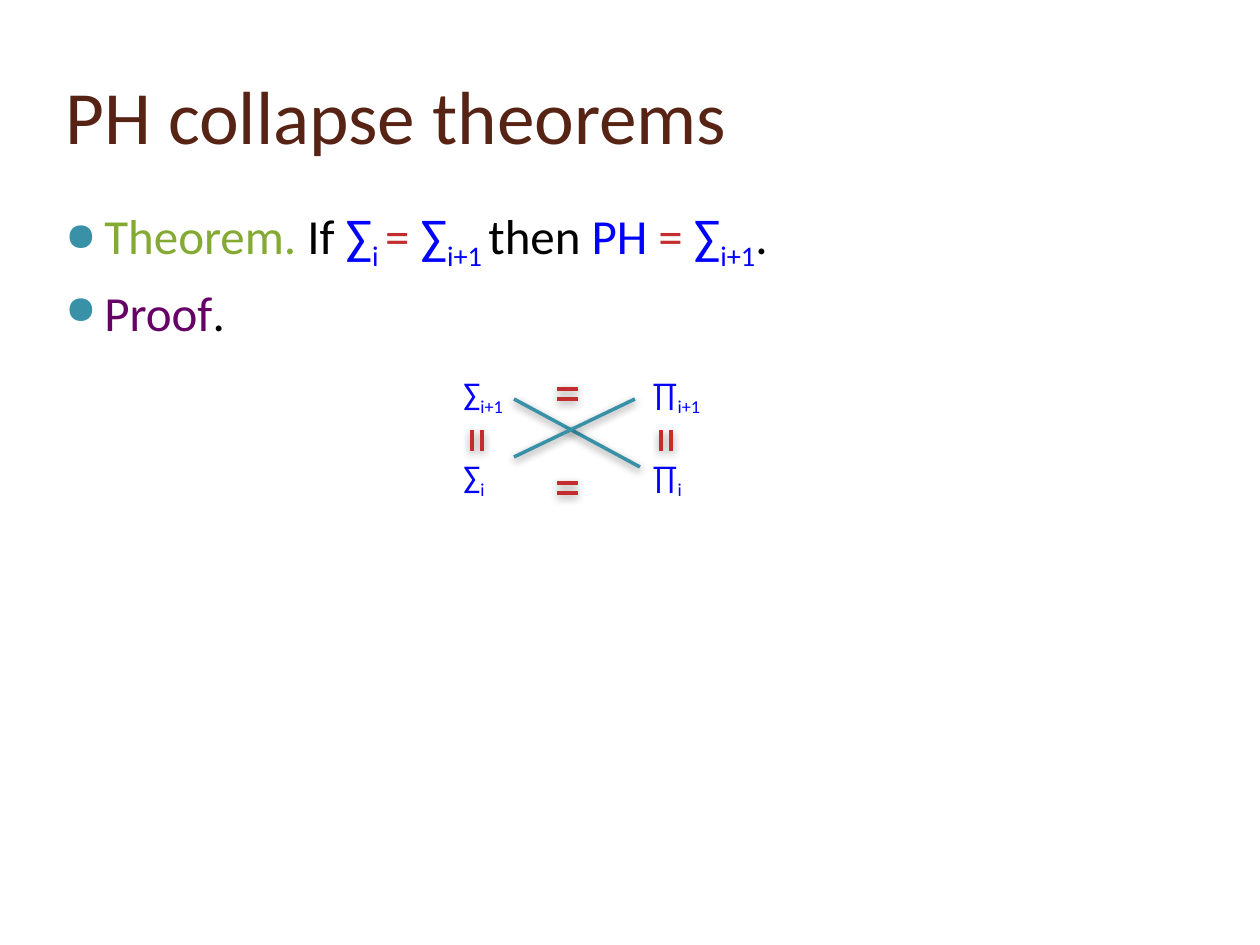
import lxml.etree
import pptx
import pptx.dml.color
import pptx.enum.shapes
import pptx.enum.text
import pptx.oxml
import pptx.oxml.ns
import pptx.util

PX = 914400 / 126
FONT = "Calibri"
COLORS = {
    "title": "572314",
    "green": "84AA33",
    "black": "000000",
    "blue": "0000FF",
    "red": "C32D2E",
    "purple": "660066",
    "teal": "3891A7",
}
NS = pptx.oxml.ns.nsdecls("a")


def px(n):
    return pptx.util.Emu(round(n * PX))


def rgb(name):
    return pptx.dml.color.RGBColor.from_string(COLORS[name])


def add_box(slide, x, y, w, h, wrap=True):
    frame = slide.shapes.add_textbox(px(x), px(y), px(w), px(h)).text_frame
    frame.word_wrap = wrap
    return frame


def add_runs(para, size, parts):
    """Each part is (text, color) or (text, color, True) for a subscript."""
    for text, color, *sub in parts:
        run = para.add_run()
        run.text = text
        run.font.size = pptx.util.Pt(size)
        run.font.name = FONT
        run.font.color.rgb = rgb(color)
        if sub:
            run._r.get_or_add_rPr().set("baseline", "-25000")


def add_bullet(para):
    props = para._p.get_or_add_pPr()
    props.set("marL", str(px(50)))
    props.set("indent", str(px(-39)))
    for xml in (
        f'<a:buClr {NS}><a:srgbClr val="{COLORS["teal"]}"/></a:buClr>',
        f'<a:buSzPct {NS} val="80000"/>',
        f'<a:buChar {NS} char="●"/>',
    ):
        props.append(pptx.oxml.parse_xml(xml))


def add_line(slide, x1, y1, x2, y2, color):
    line = slide.shapes.add_connector(
        pptx.enum.shapes.MSO_CONNECTOR.STRAIGHT, px(x1), px(y1), px(x2), px(y2))
    line.line.color.rgb = rgb(color)
    line.line.width = pptx.util.Pt(2)
    # Soft shadow below the line
    line._element.spPr.append(pptx.oxml.parse_xml(
        f'<a:effectLst {NS}><a:outerShdw blurRad="63500" dist="25400" '
        'dir="5400000" rotWithShape="0"><a:srgbClr val="000000">'
        '<a:alpha val="43000"/></a:srgbClr></a:outerShdw></a:effectLst>'))


def add_title(slide, x, y, w, h):
    frame = add_box(slide, x, y, w, h)
    frame.vertical_anchor = pptx.enum.text.MSO_ANCHOR.MIDDLE
    add_runs(frame.paragraphs[0], 43, [("PH collapse theorems", "title")])


def add_body(slide, x, y, w, h):
    frame = add_box(slide, x, y, w, h)
    items = [
        [("Theorem. ", "green"), ("If ", "black"),
         ("∑", "blue"), ("i ", "blue", True), ("= ", "red"),
         ("∑", "blue"), ("i+1 ", "blue", True), ("then ", "black"),
         ("PH ", "blue"), ("= ", "red"),
         ("∑", "blue"), ("i+1", "blue", True), (".", "black")],
        [("Proof", "purple"), (".", "black")],
    ]
    for i, parts in enumerate(items):
        para = frame.add_paragraph() if i else frame.paragraphs[0]
        para.alignment = pptx.enum.text.PP_ALIGN.JUSTIFY
        para.space_before = pptx.util.Pt(6)
        add_bullet(para)
        add_runs(para, 28, parts)


def add_proof(slide, x, y):
    # Class labels, one column for each symbol
    for symbol, left, wide in (("∑", 0, 84), ("∏", 189, 105)):
        for index, top, width in (("i+1", 0, wide), ("i", 83, 63)):
            frame = add_box(slide, x + left, y + top, width, 50)
            add_runs(frame.paragraphs[0], 18,
                     [(symbol, "blue"), (index, "blue", True)])

    # Crossing inclusions
    add_line(slide, x + 63, y + 31, x + 189, y + 99, "teal")
    add_line(slide, x + 63, y + 89, x + 184, y + 31, "teal")

    # Equal signs: upright between rows, level between columns
    for gap in (0, 10):
        for left in (21, 210):
            at = x + left + gap
            add_line(slide, at, y + 83, at, y + 62, "red")
        for top in (21, 115):
            at = y + top + gap
            add_line(slide, x + 106, at, x + 127, at, "red")


def main():
    deck = pptx.Presentation()
    deck.slide_width, deck.slide_height = px(1260), px(945)
    slide = deck.slides.add_slide(deck.slide_layouts[6])
    add_title(slide, 53, 42, 1113, 145)
    add_body(slide, 42, 199, 1155, 735)
    add_proof(slide, 451, 368)
    deck.save("out.pptx")


if __name__ == "__main__":
    main()
